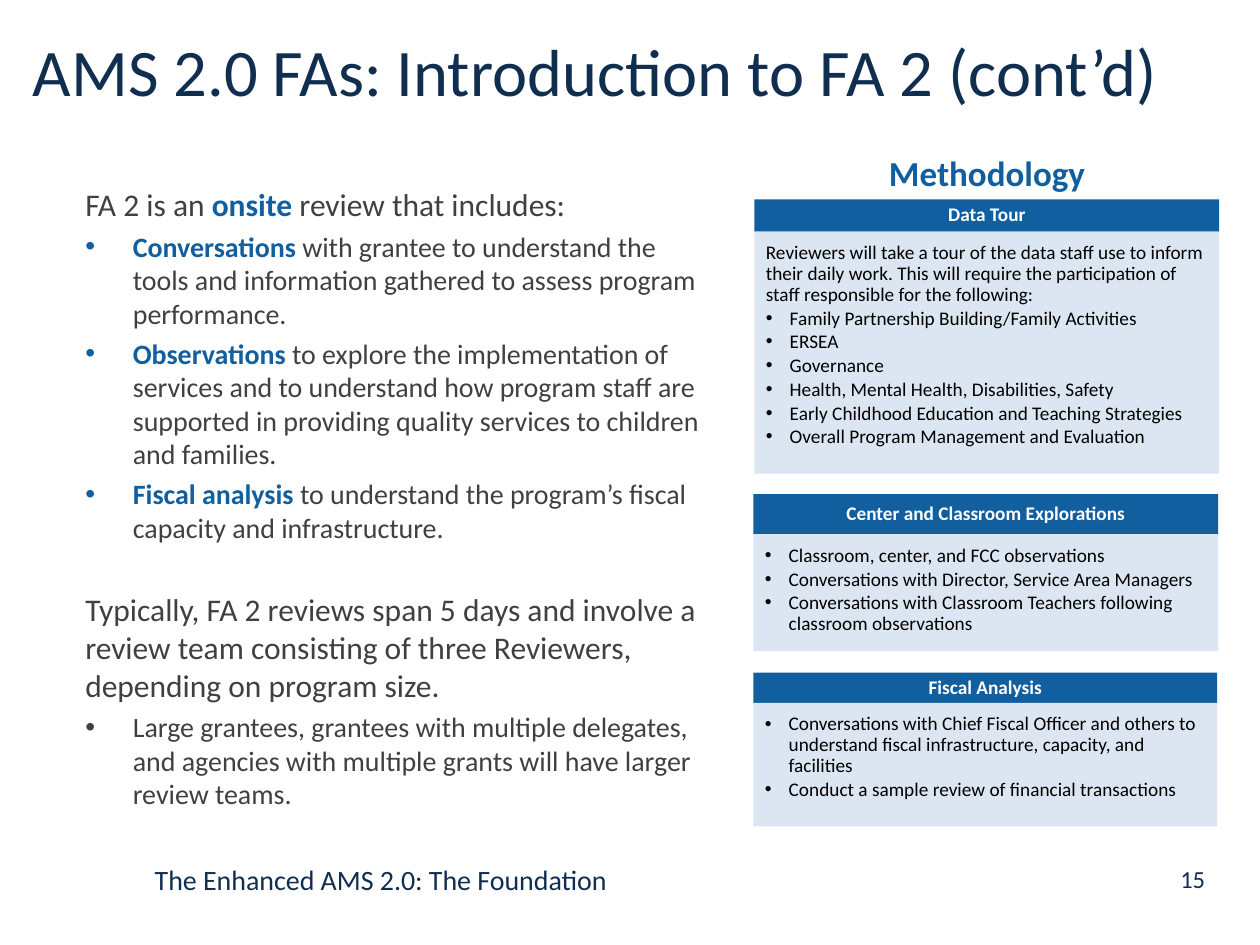
from pptx import Presentation
from pptx.dml.color import RGBColor
from pptx.enum import shapes, text
from pptx.oxml.ns import qn
from pptx.util import Cm, Pt
from lxml import etree

COLORS = {"navy": "112E51", "title": "102E50", "blue": "115F9F", "pale": "DCE6F2",
          "gray": "404040", "white": "FFFFFF", "black": "000000"}
FONT = "Calibri"

# Content: a paragraph is (bulleted, size, space before, runs); a run is (text, highlighted)
TITLE = "AMS 2.0 FAs: Introduction to FA 2 (cont’d)"
FOOTER = "The Enhanced AMS 2.0: The Foundation"
BODY = [
    (False, 18, 0, [("FA 2 is an ", False), ("onsite ", True),
                    ("review that includes:", False)]),
    (True, 16, 3.5, [("Conversations ", True),
                     ("with grantee to understand the tools and information gathered "
                      "to assess program performance.", False)]),
    (True, 16, 3.5, [("Observations", True),
                     (" to explore the implementation of services and to understand how "
                      "program staff are supported in providing quality services to "
                      "children and families.", False)]),
    (True, 16, 3.5, [("Fiscal analysis ", True),
                     ("to understand the program’s fiscal capacity and infrastructure.",
                      False)]),
    (False, 18, 26.5, [("Typically, FA 2 reviews span 5 days and involve a review team "
                        "consisting of three Reviewers, depending on program size.", False)]),
    (True, 16, 3.5, [("Large grantees, grantees with multiple delegates, and agencies with "
                      "multiple grants will have larger review teams.", False)]),
]

# Cards: heading, intro, bullets, (left, top, width, heading height, body height) in cm
CARDS = [
    ("Data Tour",
     "Reviewers will take a tour of the data staff use to inform their daily work. "
     "This will require the participation of staff responsible for the following:",
     ["Family Partnership Building/Family Activities", "ERSEA", "Governance",
      "Health, Mental Health, Disabilities, Safety",
      "Early Childhood Education and Teaching Strategies",
      "Overall Program Management and Evaluation"],
     (15.21, 4.02, 9.37, 0.65, 4.88)),
    ("Center and Classroom Explorations", None,
     ["Classroom, center, and FCC observations",
      "Conversations with Director, Service Area Managers",
      "Conversations with Classroom Teachers following classroom observations"],
     (15.19, 9.96, 9.37, 0.81, 2.36)),
    ("Fiscal Analysis", None,
     ["Conversations with Chief Fiscal Officer and others to understand fiscal "
      "infrastructure, capacity, and facilities",
      "Conduct a sample review of financial transactions"],
     (15.19, 13.56, 9.35, 0.61, 2.49)),
]


def add_text(tf, runs, size=16, color="navy", bold=False, align="LEFT", indent=0,
             before=0, after=0, spacing=1.0):
    """Add one paragraph; a positive indent (cm) makes it a bullet."""
    p = tf.paragraphs[0] if not tf.paragraphs[0].runs else tf.add_paragraph()
    if indent:
        pPr = p._p.get_or_add_pPr()
        pPr.set("marL", str(Cm(indent)))
        pPr.set("indent", str(-Cm(indent)))
        etree.SubElement(pPr, qn("a:buFont")).set("typeface", "Arial")
        etree.SubElement(pPr, qn("a:buChar")).set("char", "•")
    p.alignment = text.PP_ALIGN[align]
    p.line_spacing = spacing
    p.space_before, p.space_after = Pt(before), Pt(after)
    for words, highlighted in ([(runs, False)] if isinstance(runs, str) else runs):
        r = p.add_run()
        r.text = words
        r.font.name, r.font.size = FONT, Pt(size)
        r.font.bold = bold or highlighted
        r.font.color.rgb = RGBColor.from_string(COLORS["blue" if highlighted else color])


def add_box(slide, left, top, width, height, fill=None, anchor="TOP",
            insets=(0.25, 0.13, 0.25, 0.13)):
    """Add a text box, or a filled rectangle, and return its text frame."""
    place = [Cm(v) for v in (left, top, width, height)]
    if fill:
        sp = slide.shapes.add_shape(shapes.MSO_SHAPE.RECTANGLE, *place)
        sp.shadow.inherit = False
        sp.fill.solid()
        sp.fill.fore_color.rgb = RGBColor.from_string(COLORS[fill])
        sp.line.fill.background()
    else:
        sp = slide.shapes.add_textbox(*place)
    tf = sp.text_frame
    tf.word_wrap = True
    tf.vertical_anchor = text.MSO_ANCHOR[anchor]
    tf.margin_left, tf.margin_top, tf.margin_right, tf.margin_bottom = map(Cm, insets)
    return tf


def add_card(slide, heading, intro, bullets, place):
    left, top, width, head_h, body_h = place
    tf = add_box(slide, left, top, width, head_h, "blue", "MIDDLE", (0.3, 0.18, 0.3, 0.18))
    add_text(tf, heading, size=11, color="white", bold=True, align="CENTER", spacing=0.9)
    tf = add_box(slide, left, top + head_h, width, body_h, "pale",
                 insets=(0.23, 0.23, 0.3, 0.33))
    style = dict(size=11, color="black", spacing=0.9, after=1.7)
    if intro:
        add_text(tf, intro, **style)
    for item in bullets:
        add_text(tf, item, indent=0.48, **style)


def main():
    prs = Presentation()
    prs.slide_width, prs.slide_height = Cm(25.4), Cm(19.05)
    s = prs.slides.add_slide(prs.slide_layouts[6])

    # Title
    add_text(add_box(s, 0.41, 0.36, 24.56, 2.11, anchor="MIDDLE"), TITLE,
             size=38, color="title")

    # Left column
    tf = add_box(s, 1.47, 3.61, 12.9, 12.5)
    for bulleted, size, before, runs in BODY:
        add_text(tf, runs, size=size, color="gray", before=before,
                 indent=0.96 if bulleted else 0)

    # Methodology column
    add_text(add_box(s, 14.4, 2.92, 11, 1.12), "Methodology",
             size=20, color="blue", bold=True, align="CENTER")
    for card in CARDS:
        add_card(s, *card)

    # Footer and page number
    add_text(add_box(s, 2.87, 17.25, 18.42, 1.02), FOOTER)
    add_text(add_box(s, 22.99, 17.12, 2.11, 1.19, anchor="MIDDLE"), "15",
             size=14, align="CENTER")

    prs.save("out.pptx")


if __name__ == "__main__":
    main()
